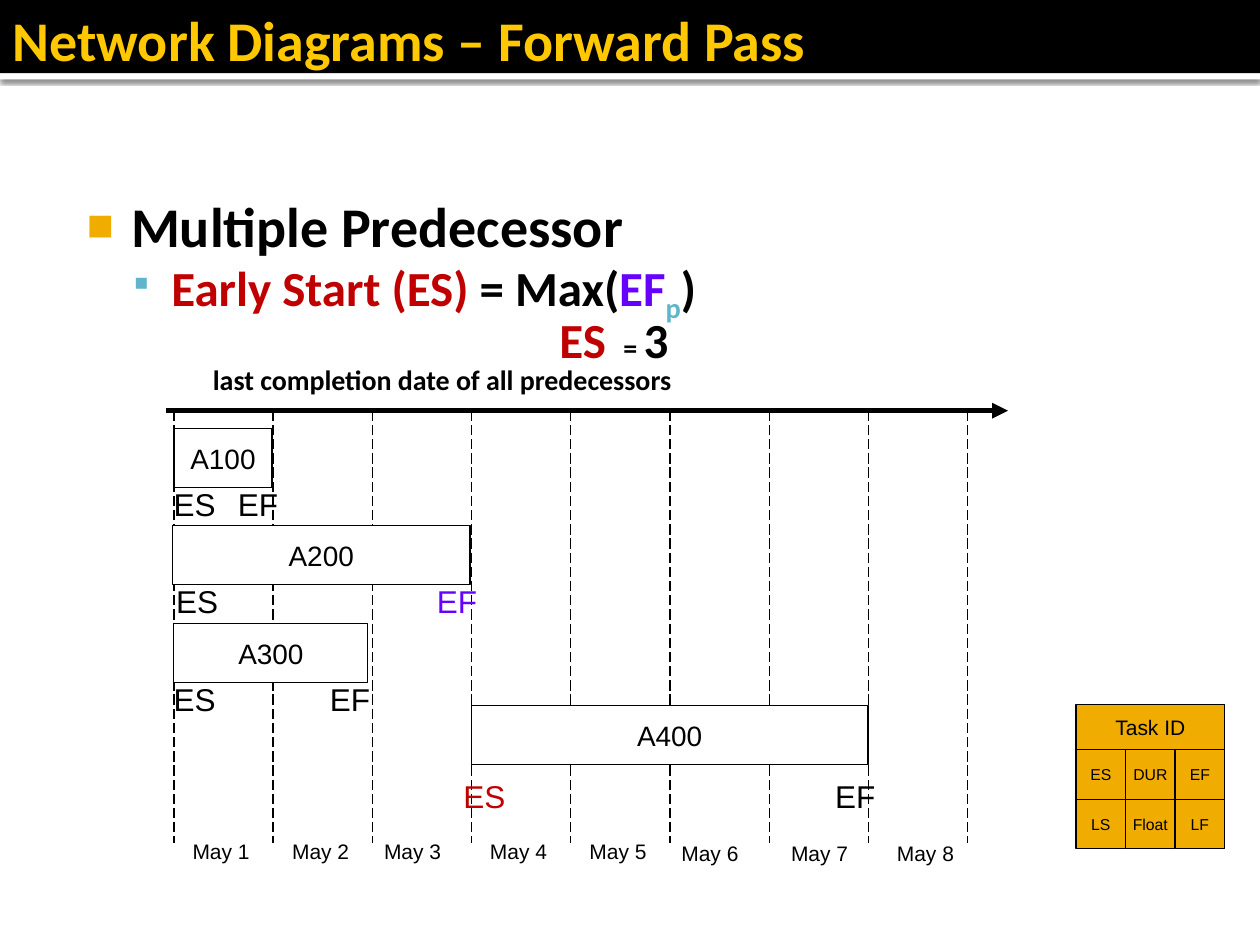
from lxml import etree
from pptx import Presentation
from pptx.dml.color import RGBColor
from pptx.enum.dml import MSO_LINE
from pptx.enum.shapes import MSO_CONNECTOR, MSO_SHAPE
from pptx.enum.text import MSO_ANCHOR, MSO_AUTO_SIZE, PP_ALIGN
from pptx.oxml import parse_xml
from pptx.oxml.ns import nsdecls, qn
from pptx.util import Inches, Pt

RECT, LINE = MSO_SHAPE.RECTANGLE, MSO_CONNECTOR.STRAIGHT
DASH = MSO_LINE.LONG_DASH
MID = MSO_ANCHOR.MIDDLE
FIXED, GROW = MSO_AUTO_SIZE.NONE, MSO_AUTO_SIZE.SHAPE_TO_FIT_TEXT
LEFT, CENTER = PP_ALIGN.LEFT, PP_ALIGN.CENTER

THEME = {
    "head": "Calibri", "text": "Arial",
    "black": "000000", "white": "FFFFFF", "yellow": "FFC800",
    "gold": "F0AD00", "blue": "60B5CC", "red": "C00000", "violet": "6600FF",
    "title": 32, "lead": 32, "sub": 28, "note": 16,
    "task": 16, "mark": 18, "date": 12, "cell": 9, "thin": 0.75, "axis": 3,
}

# Content
TITLE = "Network Diagrams – Forward Pass"
# level, margin, indent, line spacing, space before, bullet, runs
BODY = [
    (0, 0.48, -0.35, 1, 0, ("■", "gold", 80),
     [("Multiple Predecessor", "lead", "black")]),
    (1, 0.8, -0.3, 0.7, 5.6, ("▪", "blue", 90),
     [("Early Start (ES) ", "sub", "red"), ("= Max(", "sub", "black"),
      ("EF", "sub", "violet"), ("p", "sub", "blue"), (")", "sub", "black")]),
    (1, 3.88, 0, 0.7, 5.6, None,
     [("ES ", "sub", "red"), (" = ", "note", "black"), ("3", "sub", "black")]),
    (3, 1.13, 0, 0.7, 3.2, None,
     [("last completion date of all predecessors", "note", "black")]),
]
# name, left, top, width, then left and colour of ES and EF, and their drop
TASKS = [
    ("A100", 1.38, 3.4, 0.78, (1.28, "black"), (1.79, "black"), 0.4),
    ("A200", 1.37, 4.17, 2.36, (1.3, "black"), (3.37, "violet"), 0.4),
    ("A300", 1.38, 4.95, 1.54, (1.28, "black"), (2.52, "black"), 0.4),
    ("A400", 3.74, 5.6, 3.15, (3.58, "red"), (6.53, "black"), 0.52),
]
DATES = [1.43, 2.22, 2.95, 3.79, 4.58, 5.31, 6.18, 7.02]
KEY = [["ES", "DUR", "EF"], ["LS", "Float", "LF"]]

# Layout
START, END, TOP, FOOT = 1.38, 7.68, 3.26, 6.69
DAY = (END - START) / len(DATES)
KEY_X, KEY_Y, KEY_W, HEAD_H = 8.54, 5.59, 1.18, 0.36
CELL = KEY_W / 3


def color(name):
    return RGBColor.from_string(THEME[name])


def place(shape, *box):
    shape.left, shape.top, shape.width, shape.height = map(Inches, box)


def write(para, text, size, tint="black", font="text", bold=False):
    run = para.add_run()
    run.text = text
    face = run.font
    face.name, face.size, face.bold = THEME[font], Pt(THEME[size]), bold
    face.color.rgb = color(tint)
    return run


def inset(frame, *sides):
    (frame.margin_left, frame.margin_top,
     frame.margin_right, frame.margin_bottom) = map(Inches, sides)


def block(shapes, box, fill, text=None, size=None):
    shape = shapes.add_shape(RECT, *map(Inches, box))
    shape.shadow.inherit = False
    shape.fill.solid()
    shape.fill.fore_color.rgb = color(fill)
    if text is None:
        shape.line.fill.background()
        return shape
    shape.line.color.rgb = color("black")
    shape.line.width = Pt(THEME["thin"])
    frame = shape.text_frame
    frame.word_wrap, frame.vertical_anchor = False, MID
    para = frame.paragraphs[0]
    para.alignment = CENTER
    write(para, text, size)
    return shape


def label(shapes, box, text, size, tint="black"):
    frame = shapes.add_textbox(*map(Inches, box)).text_frame
    frame.word_wrap, frame.auto_size = False, GROW
    write(frame.paragraphs[0], text, size, tint)


def rule(shapes, ends, width):
    line = shapes.add_connector(LINE, *map(Inches, ends))
    line.line.color.rgb = color("black")
    line.line.width = Pt(THEME[width])
    etree.SubElement(line.element.spPr, qn("a:effectLst"))
    return line


def bullet(para, mark):
    props = para._p.get_or_add_pPr()
    if mark is None:
        etree.SubElement(props, qn("a:buNone"))
        return
    char, tint, size = mark
    tone = etree.SubElement(props, qn("a:buClr"))
    etree.SubElement(tone, qn("a:srgbClr"), val=THEME[tint])
    etree.SubElement(props, qn("a:buSzPct"), val=str(size * 1000))
    etree.SubElement(props, qn("a:buFont"), typeface=THEME["text"])
    etree.SubElement(props, qn("a:buChar"), char=char)


def add_head(slide):
    strip = block(slide.shapes, (0, 0.58, 10, 0.05), "white")
    props = strip.element.spPr
    props.remove(props.find(qn("a:effectLst")))
    props.append(parse_xml(
        f'<a:effectLst {nsdecls("a")}><a:outerShdw blurRad="{Pt(2.5)}" '
        f'dist="{Pt(0.8)}" dir="5400000"><a:srgbClr val="000000">'
        '<a:alpha val="60000"/></a:srgbClr></a:outerShdw></a:effectLst>'))
    block(slide.shapes, (0, 0, 10, 0.58), "black")
    title = slide.shapes.title
    place(title, 0, 0, 10, 0.62)
    frame = title.text_frame
    frame.auto_size, frame.vertical_anchor = FIXED, MID
    inset(frame, 0.1, 0.05, 0.05, 0.05)
    para = frame.paragraphs[0]
    para.alignment = LEFT
    write(para, TITLE, "title", "yellow", "head", True)
    # Bring the title in front of its bar
    title.element.getparent().append(title.element)


def add_body(slide):
    body = slide.placeholders[1]
    place(body, 0.5, 1.42, 9.33, 5.51)
    frame = body.text_frame
    frame.auto_size = FIXED
    inset(frame, 0.06, 0.1, 0.1, 0.05)
    for i, (level, margin, indent, space, gap, mark, runs) in enumerate(BODY):
        para = frame.add_paragraph() if i else frame.paragraphs[0]
        para.level, para.line_spacing = level, space
        para.space_before = Pt(gap)
        props = para._p.get_or_add_pPr()
        props.set("marL", str(Inches(margin)))
        props.set("indent", str(Inches(indent)))
        bullet(para, mark)
        for text, size, tint in runs:
            run = write(para, text, size, tint, "head", True)
            if text == "p":
                run._r.get_or_add_rPr().set("baseline", "-25000")


def add_chart(shapes):
    # Day lines, dates and time axis
    for i in range(len(DATES) + 1):
        x = START + i * DAY
        rule(shapes, (x, TOP, x, FOOT), "thin").line.dash_style = DASH
    for i, x in enumerate(DATES, 1):
        y = 6.61 if i < 6 else 6.62
        label(shapes, (x, y, 0.66, 0.3), f"May {i}", "date")
    axis = rule(shapes, (1.32, TOP, 8, TOP), "axis")
    etree.SubElement(axis.element.spPr.find(qn("a:ln")), qn("a:tailEnd"),
                     type="triangle")
    # Task bars with early start and early finish
    for name, x, y, width, start, end, drop in TASKS:
        block(shapes, (x, y, width, 0.47), "white", name, "task")
        for text, (left, tint) in (("ES", start), ("EF", end)):
            label(shapes, (left, y + drop, 0.54, 0.4), text, "mark", tint)


def add_key(slide):
    shapes = slide.shapes.add_group_shape().shapes
    for row, names in enumerate(KEY):
        for col, name in enumerate(names):
            box = (KEY_X + col * CELL, KEY_Y + HEAD_H + row * CELL, CELL, CELL)
            block(shapes, box, "gold", name, "cell")
    block(shapes, (KEY_X, KEY_Y, KEY_W, HEAD_H), "gold", "Task ID", "date")


def main():
    deck = Presentation()
    deck.slide_width, deck.slide_height = Inches(10), Inches(7.5)
    slide = deck.slides.add_slide(deck.slide_layouts[1])
    add_body(slide)
    add_chart(slide.shapes)
    add_key(slide)
    add_head(slide)
    deck.save("out.pptx")


if __name__ == "__main__":
    main()
